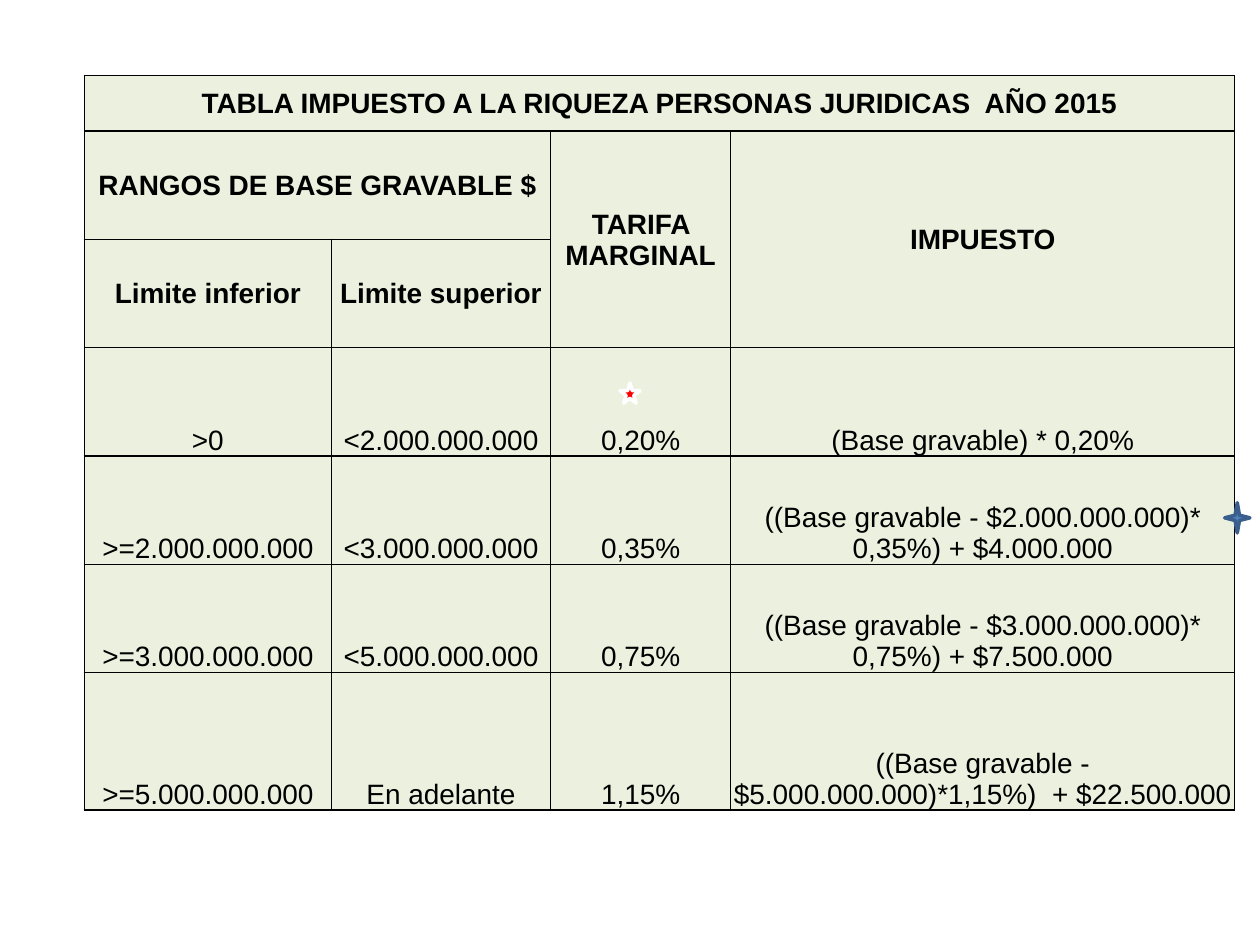
from lxml import etree
from pptx import Presentation
from pptx.dml.color import RGBColor
from pptx.enum.shapes import MSO_SHAPE
from pptx.enum.text import MSO_ANCHOR, PP_ALIGN
from pptx.oxml.ns import qn
from pptx.util import Inches, Pt

BLACK = RGBColor(0x00, 0x00, 0x00)
WHITE = RGBColor(0xFF, 0xFF, 0xFF)
PALE_GREEN = RGBColor(0xEB, 0xF1, 0xDE)
BLUE = RGBColor(0x4F, 0x81, 0xBD)
DARK_BLUE = RGBColor(0x3A, 0x5F, 0x8C)
RED = RGBColor(0xFF, 0x00, 0x00)

COLUMN_WIDTHS = [1.96, 1.74, 1.43, 4]
ROW_HEIGHTS = [0.44] + [0.86] * 5 + [1.09]
HEADER_ROWS = 3
ROWS = [
    ["TABLA IMPUESTO A LA RIQUEZA PERSONAS JURIDICAS  AÑO 2015", "", "", ""],
    ["RANGOS DE BASE GRAVABLE $", "", "TARIFA MARGINAL", "IMPUESTO"],
    ["Limite inferior", "Limite superior", "", ""],
    [">0", "<2.000.000.000", "0,20%", "(Base gravable) * 0,20%"],
    [">=2.000.000.000", "<3.000.000.000", "0,35%",
     "((Base gravable - $2.000.000.000)* 0,35%) + $4.000.000"],
    [">=3.000.000.000", "<5.000.000.000", "0,75%",
     "((Base gravable - $3.000.000.000)* 0,75%) + $7.500.000"],
    [">=5.000.000.000", "En adelante", "1,15%",
     "((Base gravable - $5.000.000.000)*1,15%)  + $22.500.000"],
]
MERGES = [((0, 0), (0, 3)), ((1, 0), (1, 1)), ((1, 2), (2, 2)), ((1, 3), (2, 3))]


def write_text(cell, text, size=16, bold=False, color=BLACK, anchor=MSO_ANCHOR.BOTTOM):
    cell.vertical_anchor = anchor
    cell.margin_left = cell.margin_right = cell.margin_top = Inches(0.01)
    cell.margin_bottom = 0
    paragraph = cell.text_frame.paragraphs[0]
    paragraph.alignment = PP_ALIGN.CENTER
    paragraph.font.size = Pt(size)
    if text:
        run = paragraph.add_run()
        run.text = text
        run.font.name = "Arial"
        run.font.size = Pt(size)
        run.font.bold = bold
        run.font.color.rgb = color


def add_borders(cell, color=BLACK, width=1):
    properties = cell._tc.get_or_add_tcPr()
    for position, side in enumerate(["a:lnL", "a:lnR", "a:lnT", "a:lnB"]):
        line = etree.Element(qn(side), w=str(Pt(width)))
        fill = etree.SubElement(line, qn("a:solidFill"))
        etree.SubElement(fill, qn("a:srgbClr"), val=str(color))
        properties.insert(position, line)


presentation = Presentation()
presentation.slide_width = Inches(10)
presentation.slide_height = Inches(7.5)
slide = presentation.slides.add_slide(presentation.slide_layouts[6])

# Tax table
table = slide.shapes.add_table(
    len(ROWS), len(COLUMN_WIDTHS), Inches(0.67), Inches(0.6),
    Inches(sum(COLUMN_WIDTHS)), Inches(sum(ROW_HEIGHTS))).table
table.first_row = False
table.horz_banding = False
for column, width in zip(table.columns, COLUMN_WIDTHS):
    column.width = Inches(width)
for row, height in zip(table.rows, ROW_HEIGHTS):
    row.height = Inches(height)
for start, end in MERGES:
    table.cell(*start).merge(table.cell(*end))

for row_index, texts in enumerate(ROWS):
    is_header = row_index < HEADER_ROWS
    anchor = MSO_ANCHOR.MIDDLE if is_header else MSO_ANCHOR.BOTTOM
    for column_index, text in enumerate(texts):
        cell = table.cell(row_index, column_index)
        cell.fill.solid()
        cell.fill.fore_color.rgb = PALE_GREEN
        write_text(cell, text, bold=is_header, anchor=anchor)
        add_borders(cell)

# Star markers
for preset, left, top, width, height, fill_color, line_color in [
    (MSO_SHAPE.STAR_4_POINT, 9.72, 3.99, 0.2, 0.24, BLUE, DARK_BLUE),
    (MSO_SHAPE.STAR_5_POINT, 4.92, 3.04, 0.16, 0.16, RED, WHITE),
]:
    star = slide.shapes.add_shape(
        preset, Inches(left), Inches(top), Inches(width), Inches(height))
    star.shadow.inherit = False
    star.fill.solid()
    star.fill.fore_color.rgb = fill_color
    star.line.color.rgb = line_color
    star.line.width = Pt(2)

presentation.save("out.pptx")
